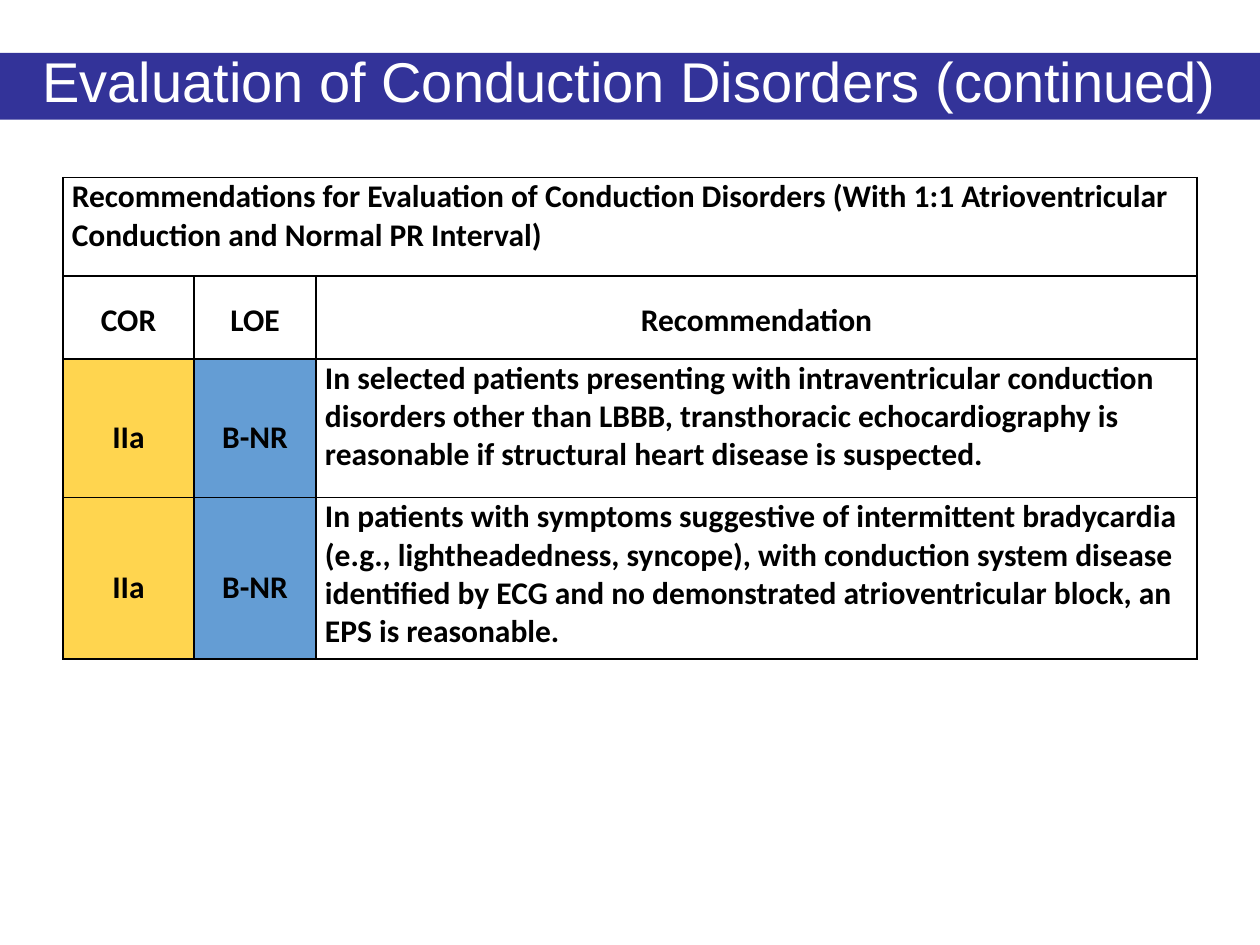
from dataclasses import dataclass

import pptx
import pptx.dml.color
import pptx.enum.text
import pptx.oxml
import pptx.oxml.ns
import pptx.util
from pptx.util import Inches

ALIGN = pptx.enum.text.PP_ALIGN
ANCHOR = pptx.enum.text.MSO_ANCHOR


@dataclass(frozen=True)
class Theme:
    banner: str = "333399"
    banner_text: str = "FFFFFF"
    ink: str = "000000"
    moderate_class: str = "FFD54F"
    evidence_level: str = "649DD4"
    title_font: str = "Arial"
    table_font: str = "Calibri"
    title_size: int = 32
    table_size: int = 18
    border_width: int = 1


def rgb(value):
    return pptx.dml.color.RGBColor.from_string(value)


def write_text(frame, text, *, font, size, color, bold=False,
               align=ALIGN.LEFT, spacing=1.0):
    paragraph = frame.paragraphs[0]
    paragraph.alignment = align
    paragraph.line_spacing = spacing
    run = paragraph.add_run()
    run.text = text
    run.font.name = font
    run.font.size = pptx.util.Pt(size)
    run.font.bold = bold
    run.font.color.rgb = rgb(color)


class SlideBuilder:
    def __init__(self, slide, theme):
        self.slide = slide
        self.theme = theme

    def title(self, text, left, top, width, height):
        banner = self.slide.shapes.title
        banner.left, banner.top = Inches(left), Inches(top)
        banner.width, banner.height = Inches(width), Inches(height)
        banner.fill.solid()
        banner.fill.fore_color.rgb = rgb(self.theme.banner)
        frame = banner.text_frame
        frame.word_wrap = True
        frame.auto_size = pptx.enum.text.MSO_AUTO_SIZE.NONE
        frame.vertical_anchor = ANCHOR.MIDDLE
        write_text(frame, text, font=self.theme.title_font,
                   size=self.theme.title_size, color=self.theme.banner_text,
                   align=ALIGN.CENTER, spacing=0.8)

    def table(self, left, top, widths, heights):
        grid = self.slide.shapes.add_table(
            len(heights), len(widths), Inches(left), Inches(top),
            Inches(sum(widths)), Inches(sum(heights))).table
        grid.first_row = grid.horz_banding = False
        for column, width in zip(grid.columns, widths):
            column.width = Inches(width)
        for row, height in zip(grid.rows, heights):
            row.height = Inches(height)
        for cell in grid.iter_cells():
            self.border(cell)
            cell.fill.background()
        return grid

    def border(self, cell):
        properties = cell._tc.get_or_add_tcPr()
        width = pptx.util.Pt(self.theme.border_width)
        for side in ("lnL", "lnR", "lnT", "lnB"):
            properties.append(pptx.oxml.parse_xml(
                f'<a:{side} {pptx.oxml.ns.nsdecls("a")} w="{width}"><a:solidFill>'
                f'<a:srgbClr val="{self.theme.ink}"/></a:solidFill></a:{side}>'))

    def cell(self, cell, text, fill=None, anchor=ANCHOR.TOP, **text_format):
        cell.margin_left = cell.margin_right = Inches(0.07)
        cell.margin_top = cell.margin_bottom = 0
        cell.vertical_anchor = anchor
        if fill:
            cell.fill.solid()
            cell.fill.fore_color.rgb = rgb(fill)
        write_text(cell.text_frame, text, font=self.theme.table_font,
                   size=self.theme.table_size, color=self.theme.ink,
                   bold=True, **text_format)


def main():
    presentation = pptx.Presentation()
    presentation.slide_width = Inches(10)
    presentation.slide_height = Inches(7.5)
    theme = Theme()
    slide = presentation.slides.add_slide(presentation.slide_layouts[5])
    builder = SlideBuilder(slide, theme)

    builder.title("Evaluation of Conduction Disorders (continued)", 0, 0.42, 10, 0.53)

    grid = builder.table(0.5, 1.41, [1.04, 0.97, 6.99], [0.78, 0.66, 1.1, 1.28])
    grid.cell(0, 0).merge(grid.cell(0, 2))
    builder.cell(grid.cell(0, 0),
                 "Recommendations for Evaluation of Conduction Disorders "
                 "(With 1:1 Atrioventricular Conduction and Normal PR Interval)")

    centered = {"anchor": ANCHOR.MIDDLE, "align": ALIGN.CENTER}
    for column, heading in enumerate(("COR", "LOE", "Recommendation")):
        builder.cell(grid.cell(1, column), heading, spacing=1.15, **centered)

    recommendations = [
        ("IIa", "B-NR",
         "In selected patients presenting with intraventricular conduction "
         "disorders other than LBBB, transthoracic echocardiography is "
         "reasonable if structural heart disease is suspected."),
        ("IIa", "B-NR",
         "In patients with symptoms suggestive of intermittent bradycardia "
         "(e.g., lightheadedness, syncope), with conduction system disease "
         "identified by ECG and no demonstrated atrioventricular block, an "
         "EPS is reasonable."),
    ]
    for row, (strength, evidence, advice) in enumerate(recommendations, start=2):
        builder.cell(grid.cell(row, 0), strength, fill=theme.moderate_class,
                     spacing=1.5, **centered)
        builder.cell(grid.cell(row, 1), evidence, fill=theme.evidence_level,
                     spacing=1.5, **centered)
        builder.cell(grid.cell(row, 2), advice)

    presentation.save("out.pptx")


if __name__ == "__main__":
    main()
